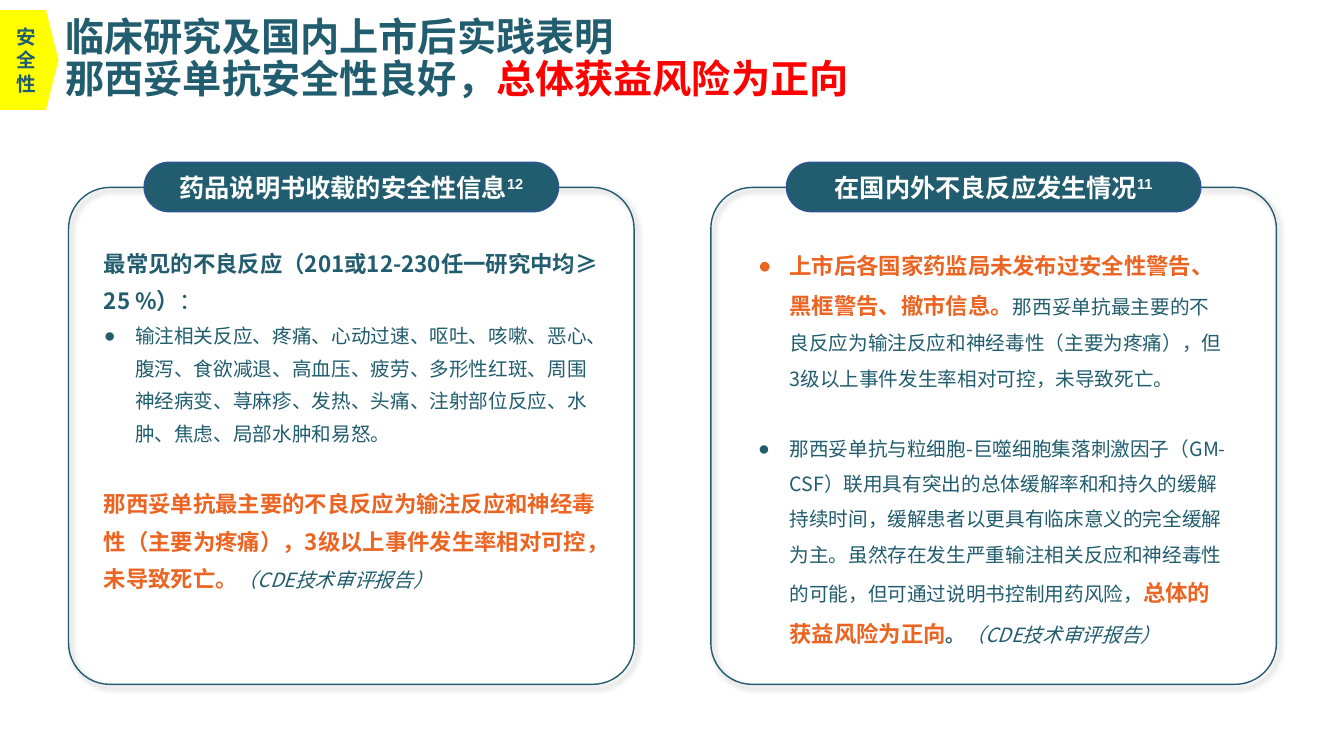
from copy import deepcopy
from dataclasses import dataclass

from lxml.etree import SubElement
from pptx import Presentation
from pptx.dml.color import RGBColor
from pptx.enum.shapes import MSO_SHAPE as Shape
from pptx.enum.text import MSO_ANCHOR as Anchor, MSO_AUTO_SIZE as AutoSize, PP_ALIGN as Align
from pptx.oxml.ns import qn
from pptx.util import Inches, Pt

TEAL = RGBColor(0x21, 0x5D, 0x6E)
ORANGE = RGBColor(0xEC, 0x64, 0x22)
RED = RGBColor(0xFF, 0x00, 0x00)
YELLOW = RGBColor(0xFF, 0xFF, 0x00)
WHITE = RGBColor(0xFF, 0xFF, 0xFF)
PILL_EDGE = RGBColor(0x2F, 0x55, 0x97)
HAN_FONT = "Noto Sans CJK SC"
PANEL_LEFTS = (0.68, 7.05)


@dataclass
class Span:
    text: str
    size: int = 14
    color: RGBColor = TEAL
    bold: bool = False
    italic: bool = False
    latin: str = HAN_FONT
    raised: bool = False


def strong(text, color=TEAL):
    return Span(text, 16, color, bold=True)


def report_source():
    return Span("（CDE技术审评报告）", italic=True)


def write_spans(paragraph, spans):
    """Add the spans as runs; a leading vertical tab starts a new line."""
    for span in spans:
        line_break = None
        if span.text.startswith("\v"):
            paragraph.add_line_break()
            line_break = paragraph._p[-1]
        run = paragraph.add_run()
        run.text = span.text.lstrip("\v")
        font = run.font
        font.size, font.bold, font.italic = Pt(span.size), span.bold, span.italic
        font.color.rgb = span.color
        font.name = span.latin
        properties = font._element
        SubElement(properties, qn("a:ea")).set("typeface", HAN_FONT)
        if span.raised:
            properties.set("baseline", "30000")
        if line_break is not None:
            line_break.append(deepcopy(properties))


def set_bullet(paragraph, bulleted):
    properties = paragraph._p.get_or_add_pPr()
    indent = Inches(0.31) if bulleted else 0
    properties.set("marL", str(indent))
    properties.set("indent", str(-indent))
    if bulleted:
        SubElement(properties, qn("a:buFont")).set("typeface", "Arial")
        SubElement(properties, qn("a:buChar")).set("char", "●")
    else:
        SubElement(properties, qn("a:buNone"))


def place(placeholder, left, top, width, height):
    placeholder.left, placeholder.top = Inches(left), Inches(top)
    placeholder.width, placeholder.height = Inches(width), Inches(height)


def fill_title(title):
    place(title, 0.55, 0.11, 12.44, 0.97)
    frame = title.text_frame
    frame.auto_size = AutoSize.NONE
    frame.vertical_anchor = Anchor.MIDDLE
    heading = frame.paragraphs[0]
    heading.alignment = Align.LEFT
    heading.line_spacing = 0.9
    write_spans(heading, [
        Span(text, 28, color, bold=True, latin="Arial") for text, color in (
            ("临床研究及国内上市后实践表明", TEAL),
            ("\v那西妥单抗安全性良好，", TEAL),
            ("总体获益风险为正向", RED))])


def fill_body(body, box, line_spacing, items):
    """Write items of (bulleted, points of space before, spans)."""
    place(body, *box)
    frame = body.text_frame
    frame.word_wrap = True
    frame.auto_size = AutoSize.NONE
    frame.vertical_anchor = Anchor.TOP
    for number, (bulleted, gap, spans) in enumerate(items):
        paragraph = frame.add_paragraph() if number else frame.paragraphs[0]
        paragraph.alignment = Align.LEFT
        paragraph.line_spacing = line_spacing
        paragraph.space_before = Pt(gap)
        paragraph.space_after = Pt(0)
        set_bullet(paragraph, bulleted)
        write_spans(paragraph, spans)


def add_block(slide, kind, box, corner, fill=None, line=None, spans=()):
    block = slide.shapes.add_shape(kind, *map(Inches, box))
    block.adjustments[0] = corner
    block.shadow.inherit = False
    if fill is None:
        block.fill.background()
    else:
        block.fill.solid()
        block.fill.fore_color.rgb = fill
    if line is None:
        block.line.fill.background()
    else:
        block.line.color.rgb = line
        block.line.width = Pt(1)
    frame = block.text_frame
    frame.vertical_anchor = Anchor.MIDDLE
    frame.paragraphs[0].alignment = Align.CENTER
    write_spans(frame.paragraphs[0], spans)
    return block


def add_soft_shadow(block):
    effects = block._element.spPr.find(qn("a:effectLst"))
    shadow = SubElement(effects, qn("a:outerShdw"), blurRad=str(Pt(4)), dist=str(Pt(3)),
                        dir="2700000", algn="tl", rotWithShape="0")
    color = SubElement(shadow, qn("a:srgbClr"), val="000000")
    SubElement(color, qn("a:alpha"), val="40000")


def add_panel(slide, left, heading, reference):
    panel = add_block(slide, Shape.ROUNDED_RECTANGLE, (left, 1.86, 5.61, 4.93), 0.083, line=TEAL)
    add_soft_shadow(panel)
    add_block(slide, Shape.ROUNDED_RECTANGLE, (left + 0.75, 1.61, 4.11, 0.49), 0.5, TEAL, PILL_EDGE, [
        Span(heading, 18, WHITE, bold=True, latin="Arial"),
        Span(reference, 18, WHITE, bold=True, latin="Arial", raised=True)])


def main():
    deck = Presentation()
    deck.slide_width, deck.slide_height = Inches(13.33), Inches(7.5)
    slide = deck.slides.add_slide(deck.slide_layouts.get_by_name("Two Content"))
    title, label_info, incidence = slide.placeholders

    fill_title(title)
    add_block(slide, Shape.PENTAGON, (0, 0.1, 0.58, 0.99), 0.214, YELLOW,
              spans=[Span("安全性", bold=True)])

    fill_body(label_info, (0.93, 2.32, 5.12, 4.05), 1.4, [
        (False, 0, [strong("最常见的不良反应（201或12-230任一研究中均≥ 25 %）"), Span("：", 16)]),
        (True, 0, [Span("输注相关反应、疼痛、心动过速、呕吐、咳嗽、恶心、腹泻、食欲减退、高血压、疲劳、"
                        "多形性红斑、周围神经病变、荨麻疹、发热、头痛、注射部位反应、水肿、焦虑、"
                        "局部水肿和易怒。")]),
        (False, 24, [strong("那西妥单抗最主要的不良反应为输注反应和神经毒性（主要为疼痛），"
                            "3级以上事件发生率相对可控，未导致死亡。", ORANGE),
                     report_source()]),
    ])
    fill_body(incidence, (7.42, 2.32, 4.86, 4.38), 1.5, [
        (True, 0, [strong("上市后各国家药监局未发布过安全性警告、黑框警告、撤市信息。", ORANGE),
                   Span("那西妥单抗最主要的不良反应为输注反应和神经毒性（主要为疼痛），"
                        "但3级以上事件发生率相对可控，未导致死亡。")]),
        (True, 25, [Span("那西妥单抗与粒细胞-巨噬细胞集落刺激因子（GM-CSF）联用具有突出的总体缓解率和"
                         "和持久的缓解持续时间，缓解患者以更具有临床意义的完全缓解为主。虽然存在发生严重"
                         "输注相关反应和神经毒性的可能，但可通过说明书控制用药风险，"),
                    strong("总体的获益风险为正向", ORANGE),
                    Span("。", bold=True),
                    report_source()]),
    ])

    headings = (("药品说明书收载的安全性信息", "12"), ("在国内外不良反应发生情况", "11"))
    for left, (heading, reference) in zip(PANEL_LEFTS, headings):
        add_panel(slide, left, heading, reference)
    deck.save("out.pptx")


if __name__ == "__main__":
    main()
